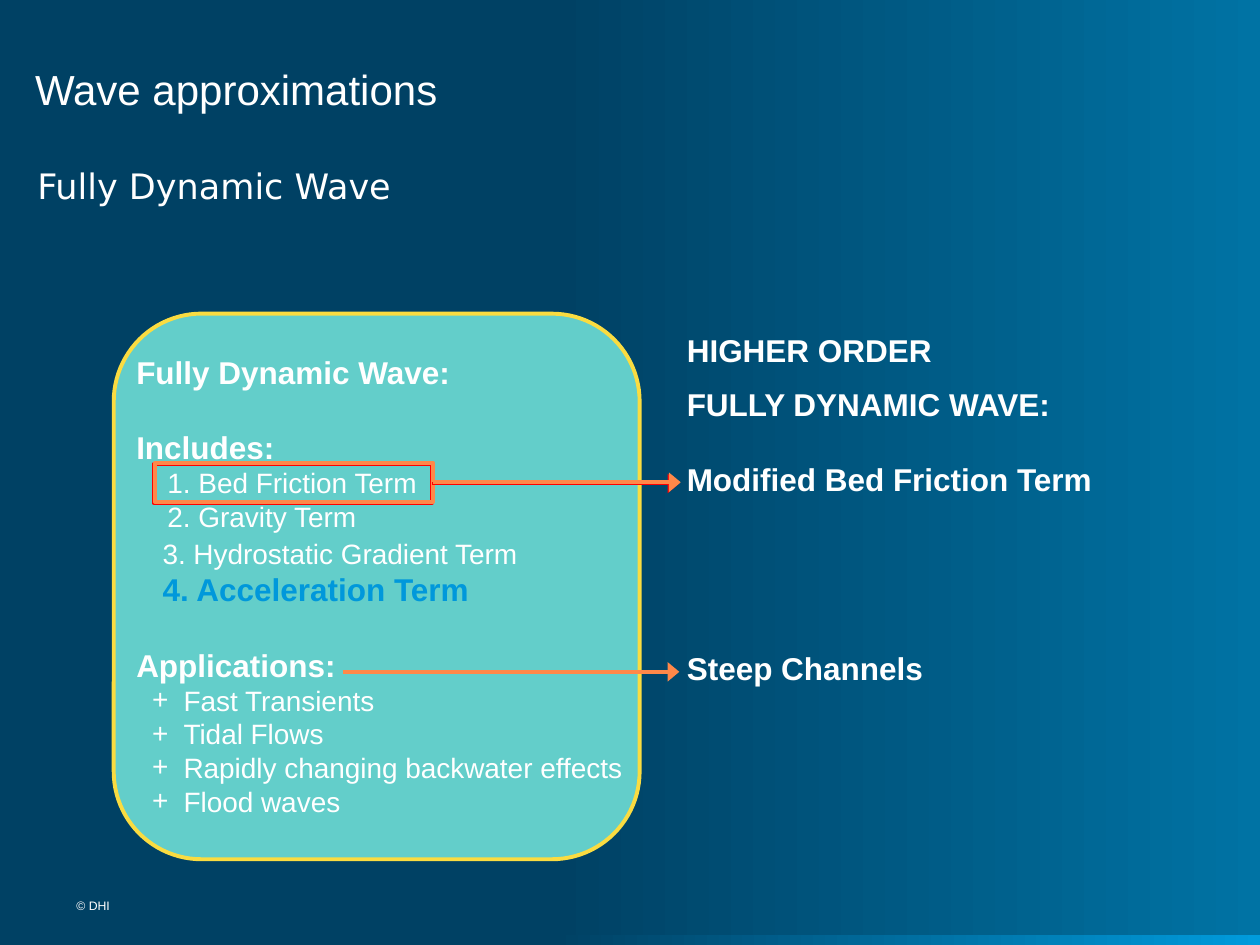
import pptx
import pptx.util
import pptx.dml.color
import pptx.enum.shapes
import pptx.enum.text
from lxml import etree
from pptx.util import Pt

COLORS = {
    "navy": "004164", "blue": "0073A4", "sky": "009BDC", "accent": "0098DB",
    "teal": "63CECA", "yellow": "FADC41", "red": "FF0000", "orange": "FF8849",
    "white": "FFFFFF",
}
SHAPES = pptx.enum.shapes.MSO_SHAPE
ANCHORS = pptx.enum.text.MSO_ANCHOR
DRAWING = "{http://schemas.openxmlformats.org/drawingml/2006/main}"
BLANK = 21.5  # gap as high as one 18 pt line


def rgb(name):
    return pptx.dml.color.RGBColor.from_string(COLORS[name])


def write(box, lines, anchor=ANCHORS.TOP, inset=True, font="Arial"):
    """Fill a box; each line is (text, size, bold, color, space before, indent, bullet)."""
    frame = box.text_frame
    frame.word_wrap = True
    frame.auto_size = pptx.enum.text.MSO_AUTO_SIZE.NONE
    frame.vertical_anchor = anchor
    if not inset:
        frame.margin_left = frame.margin_right = frame.margin_top = frame.margin_bottom = 0
    for index, (text, size, bold, color, before, indent, bullet) in enumerate(lines):
        para = frame.add_paragraph() if index else frame.paragraphs[0]
        para.text = text
        para.alignment = pptx.enum.text.PP_ALIGN.LEFT
        para.space_before = Pt(before)
        properties = para._p.get_or_add_pPr()
        properties.set("marL", str(Pt(indent)))
        if bullet:
            properties.set("indent", str(Pt(-18)))
            etree.SubElement(properties, DRAWING + "buFont", typeface="Arial")
            etree.SubElement(properties, DRAWING + "buChar", char=bullet)
        for span in para.runs:
            span.font.name = font
            span.font.size = Pt(size)
            span.font.bold = bold
            span.font.color.rgb = rgb(color)


deck = pptx.Presentation()
deck.slide_width, deck.slide_height = Pt(720), Pt(540)
page = deck.slides.add_slide(deck.slide_layouts[5])
shapes = page.shapes

# Background and bottom strip, both fading to the right
strip = shapes.add_shape(SHAPES.RECTANGLE, Pt(0), Pt(534.25), Pt(720), Pt(5.75))
strip.shadow.inherit = False
strip.line.fill.background()
for fill, end in ((page.background.fill, "blue"), (strip.fill, "sky")):
    fill.gradient()
    fill.gradient_angle = 0
    for stop, position, color in zip(fill.gradient_stops, (0.44, 1), ("navy", end)):
        stop.position = position
        stop.color.rgb = rgb(color)

# Title and subtitle
title = shapes.title
title.left, title.top, title.width, title.height = Pt(20), Pt(17.5), Pt(619), Pt(47.5)
write(title, [("Wave approximations", 24, False, "white", 0, 0, None)],
      ANCHORS.BOTTOM, inset=False)
subtitle = shapes.add_textbox(Pt(14.2), Pt(67), Pt(533), Pt(78))
write(subtitle, [("Fully Dynamic Wave", 20, False, "white", 0, 0, None)],
      ANCHORS.MIDDLE, font="DejaVu Sans")

# Panel with the terms and applications
panel = shapes.add_shape(SHAPES.ROUNDED_RECTANGLE, Pt(65), Pt(179.25), Pt(300.5), Pt(311.75))
panel.shadow.inherit = False
panel.fill.solid()
panel.fill.fore_color.rgb = rgb("teal")
panel.line.color.rgb = rgb("yellow")
panel.line.width = Pt(2.25)

terms = shapes.add_textbox(Pt(70.8), Pt(198), Pt(335), Pt(274))
write(terms, [
    ("Fully Dynamic Wave:", 18, True, "white", 0, 0, None),
    ("Includes:", 18, True, "white", BLANK, 0, None),
    ("1. Bed Friction Term", 16, False, "white", 0, 17.8, None),
    ("2. Gravity Term", 16, False, "white", 0, 17.8, None),
    ("3. Hydrostatic Gradient Term", 16, False, "white", 2, 15, None),
    ("4. Acceleration Term", 18, True, "accent", 0, 15, None),
    ("Applications:", 18, True, "white", BLANK, 0, None),
] + [(use, 16, False, "white", 0, 27, "+") for use in (
    "Fast Transients", "Tidal Flows", "Rapidly changing backwater effects", "Flood waves")])

# Higher order column
higher = shapes.add_textbox(Pt(385.4), Pt(185.75), Pt(335), Pt(212.5))
write(higher, [
    (text, 18, True, "white", before, 0, None) for text, before in (
        ("HIGHER ORDER", 0), ("FULLY DYNAMIC WAVE:", 9),
        ("Modified Bed Friction Term", BLANK), ("Steep Channels", 4 * BLANK))])

# Frames around the friction term, orange over red
for left, top, color in ((87.8, 265.2, "red"), (88.5, 264.5, "orange")):
    frame = shapes.add_shape(SHAPES.RECTANGLE, Pt(left), Pt(top), Pt(159), Pt(22.3))
    frame.shadow.inherit = False
    frame.fill.background()
    frame.line.color.rgb = rgb(color)
    frame.line.width = Pt(2.25)

# Arrows to the higher order column
for start, end, height, color in ((247, 388.2, 276.3, "red"), (195.8, 388.2, 383.9, "orange"),
                                  (247.7, 389, 275.6, "orange")):
    arrow = shapes.add_connector(pptx.enum.shapes.MSO_CONNECTOR.STRAIGHT,
                                 Pt(start), Pt(height), Pt(end), Pt(height))
    arrow.line.color.rgb = rgb(color)
    arrow.line.width = Pt(2.25)
    etree.SubElement(arrow.line._get_or_add_ln(), DRAWING + "tailEnd", type="triangle", w="lg")
    etree.SubElement(arrow._element.spPr, DRAWING + "effectLst")

# Footer
footer = shapes.add_textbox(Pt(43.7), Pt(513.2), Pt(111.6), Pt(13.7))
write(footer, [("© DHI", 7, False, "white", 0, 0, None)], inset=False)

deck.save("out.pptx")
